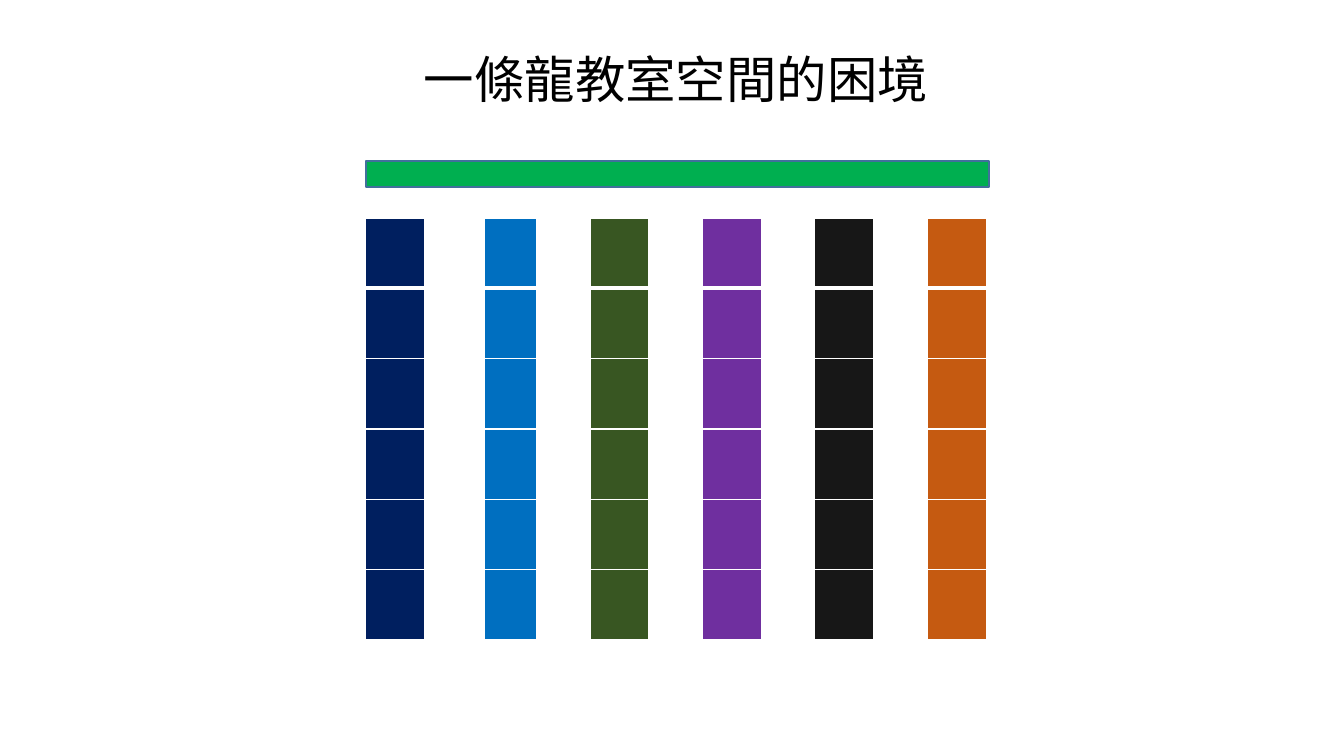
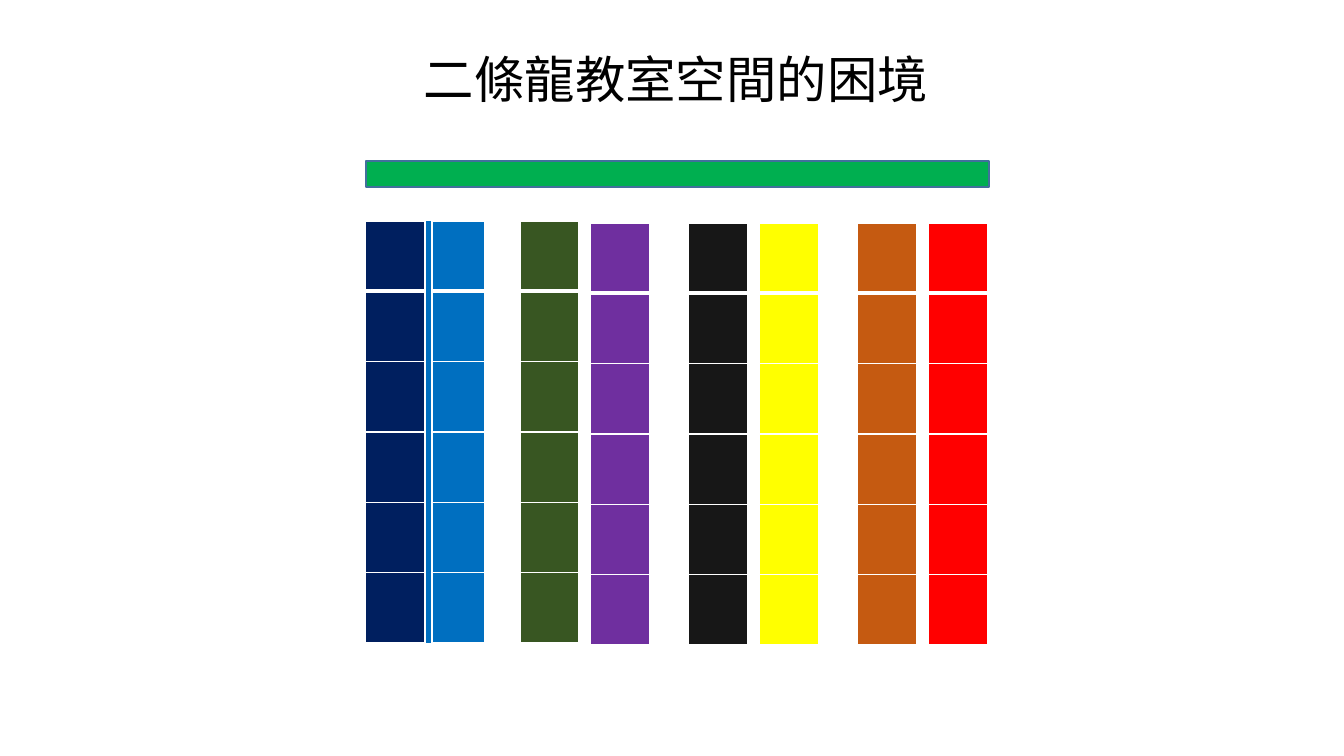
from lxml.etree import SubElement
from pptx import Presentation
from pptx.dml.color import RGBColor
from pptx.enum.shapes import MSO_SHAPE
from pptx.oxml.ns import qn
from pptx.util import Emu, Pt

FONT = "Noto Sans CJK JP"
TITLE_COLOR = RGBColor(0x00, 0x00, 0x00)
BAR_FILL = RGBColor(0x00, 0xAF, 0x50)
BAR_LINE = RGBColor(0x41, 0x70, 0x9C)
BORDER = RGBColor(0xFF, 0xFF, 0xFF)
NAVY = RGBColor(0x00, 0x1F, 0x5F)
BLUE = RGBColor(0x00, 0x6F, 0xC0)
GREEN = RGBColor(0x38, 0x56, 0x22)
PURPLE = RGBColor(0x6F, 0x2F, 0x9F)
BLACK = RGBColor(0x17, 0x17, 0x17)
ORANGE = RGBColor(0xC5, 0x5A, 0x11)
YELLOW = RGBColor(0xFF, 0xFF, 0x00)
RED = RGBColor(0xFF, 0x00, 0x00)

# Lengths in px
SLIDE_SIZE = (1344, 756)
TITLE_BOX = (424, 48, 507, 73)
BAR_BOX = (366, 161, 623, 26)
ROWS = 6
TOWER_HEIGHT = 422
GAP_WIDTH = 7  # a column this narrow carries no row lines

# Each tower: left, top, columns as (width, colour)
SLIDES = [
    ("一條龍教室空間的困境", [
        (365, 218, [(60, NAVY)]),
        (484, 218, [(53, BLUE)]),
        (590, 218, [(59, GREEN)]),
        (702, 218, [(60, PURPLE)]),
        (814, 218, [(60, BLACK)]),
        (927, 218, [(60, ORANGE)]),
    ]),
    ("二條龍教室空間的困境", [
        (365, 221, [(60, NAVY), (GAP_WIDTH, BLUE), (53, BLUE)]),
        (520, 221, [(59, GREEN)]),
        (590, 223, [(60, PURPLE)]),
        (688, 223, [(60, BLACK)]),
        (759, 223, [(60, YELLOW)]),
        (857, 223, [(60, ORANGE)]),
        (928, 223, [(60, RED)]),
    ]),
]


def px(length):
    return Emu(round(length * 914400 / 100.8))


def add_title(page, text):
    box = page.shapes.add_textbox(*map(px, TITLE_BOX))
    frame = box.text_frame
    frame.word_wrap = True
    frame.margin_left = frame.margin_top = frame.margin_right = frame.margin_bottom = 0
    span = frame.paragraphs[0].add_run()
    span.text = text
    span.font.size = Pt(36)
    span.font.name = FONT
    span.font.color.rgb = TITLE_COLOR
    SubElement(span.font._element, qn("a:ea"), typeface=FONT)


def add_bar(page):
    bar = page.shapes.add_shape(MSO_SHAPE.RECTANGLE, *map(px, BAR_BOX))
    bar.shadow.inherit = False
    bar.fill.solid()
    bar.fill.fore_color.rgb = BAR_FILL
    bar.line.color.rgb = BAR_LINE
    bar.line.width = Pt(0.96)


def set_borders(cell, top, bottom):
    """Draw the cell's borders; a width of 0 leaves that side open."""
    properties = cell._tc.get_or_add_tcPr()
    for side, width in (("L", 1), ("R", 1), ("T", top), ("B", bottom)):
        line = SubElement(properties, qn(f"a:ln{side}"), w=str(Pt(width)))
        if width:
            fill = SubElement(line, qn("a:solidFill"))
            SubElement(fill, qn("a:srgbClr"), val=str(BORDER))
        else:
            SubElement(line, qn("a:noFill"))


def add_tower(page, left, top, columns):
    total_width = sum(width for width, _ in columns)
    table = page.shapes.add_table(
        ROWS, len(columns), px(left), px(top), px(total_width), px(TOWER_HEIGHT)).table
    table.first_row = table.horz_banding = False
    for row in table.rows:
        row.height = px(TOWER_HEIGHT / ROWS)
    for column_index, (width, color) in enumerate(columns):
        table.columns[column_index].width = px(width)
        for row_index in range(ROWS):
            cell = table.cell(row_index, column_index)
            cell.margin_left = cell.margin_right = 0
            if width == GAP_WIDTH:
                set_borders(cell, 0, 0)
            else:
                set_borders(cell, 3 if row_index == 1 else 1, 3 if row_index == 0 else 1)
            cell.fill.solid()
            cell.fill.fore_color.rgb = color


def main():
    deck = Presentation()
    deck.slide_width, deck.slide_height = map(px, SLIDE_SIZE)
    for title, towers in SLIDES:
        page = deck.slides.add_slide(deck.slide_layouts[6])
        add_title(page, title)
        add_bar(page)
        for tower in towers:
            add_tower(page, *tower)
    deck.save("out.pptx")


if __name__ == "__main__":
    main()
